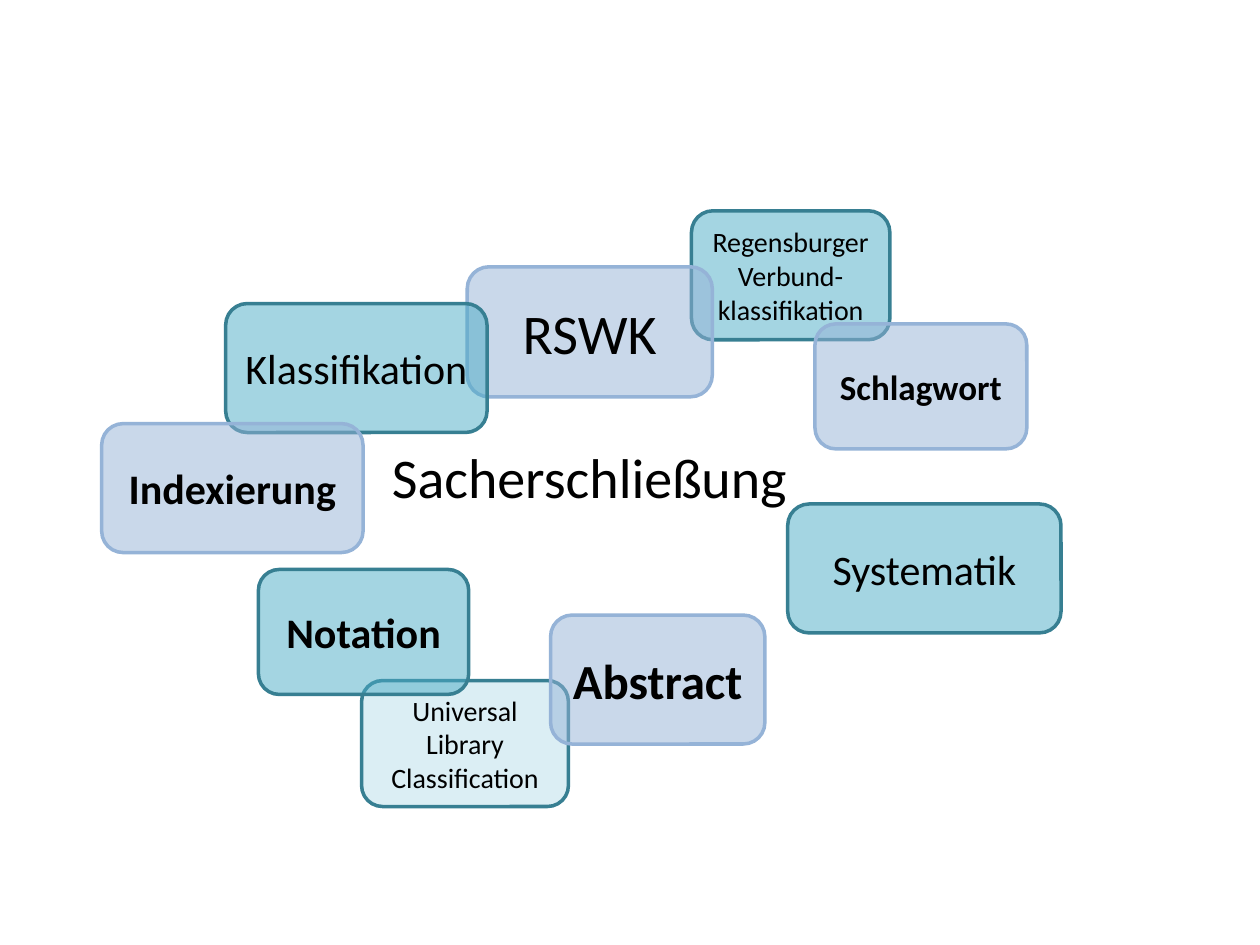
from dataclasses import dataclass

import lxml.etree
import pptx
import pptx.dml.color
import pptx.enum.shapes
import pptx.enum.text
import pptx.oxml.ns
import pptx.util
from pptx.util import Cm

FONT = "Calibri"
BLACK = "000000"


@dataclass(frozen=True)
class Style:
    fill: str
    line: str
    opacity: int = 100


TEAL = Style("4BACC6", "377F92", 50)
PALE = Style("DBEEF4", "377F92")
BLUE = Style("95B3D7", "95B3D7", 50)


@dataclass(frozen=True)
class Term:
    """A rounded box; lengths are in centimetres."""
    text: str
    left: float
    top: float
    width: float
    height: float
    style: Style
    size: int
    bold: bool = False


TERMS = [
    Term("Regensburger Verbund-\nklassifikation", 13.94, 4.25, 4, 2.6, TEAL, 16),
    Term("Universal Library Classification", 7.29, 13.72, 4.17, 2.54, PALE, 16),
    Term("RSWK", 9.42, 5.38, 4.94, 2.62, BLUE, 32),
    Term("Klassifikation", 4.55, 6.12, 5.27, 2.6, TEAL, 24),
    Term("Notation", 5.21, 11.48, 4.24, 2.52, TEAL, 24, True),
    Term("Systematik", 15.88, 10.16, 5.51, 2.6, TEAL, 24),
    Term("Schlagwort", 16.43, 6.53, 4.27, 2.52, BLUE, 20, True),
    Term("Indexierung", 2.05, 8.54, 5.27, 2.6, BLUE, 24, True),
    Term("Abstract", 11.1, 12.4, 4.32, 2.6, BLUE, 28, True),
]


def rgb(value: str) -> pptx.dml.color.RGBColor:
    return pptx.dml.color.RGBColor.from_string(value)


def set_opacity(sp, percent: int) -> None:
    color = sp.fill._xPr.find(".//" + pptx.oxml.ns.qn("a:srgbClr"))
    alpha = lxml.etree.SubElement(color, pptx.oxml.ns.qn("a:alpha"))
    alpha.set("val", str(percent * 1000))


def write(sp, text: str, size: int, bold: bool, align) -> None:
    tf = sp.text_frame
    tf.word_wrap = True
    tf.vertical_anchor = pptx.enum.text.MSO_ANCHOR.MIDDLE
    tf.text = text
    font = {"name": FONT, "size": pptx.util.Pt(size), "bold": bold}
    for p in tf.paragraphs:
        p.alignment = align
        for r in p.runs:
            for name, value in font.items():
                setattr(r.font, name, value)
            r.font.color.rgb = rgb(BLACK)


def add_term(s, term: Term) -> None:
    sp = s.shapes.add_shape(
        pptx.enum.shapes.MSO_SHAPE.ROUNDED_RECTANGLE,
        Cm(term.left), Cm(term.top), Cm(term.width), Cm(term.height))
    sp.shadow.inherit = False
    sp.fill.solid()
    sp.fill.fore_color.rgb = rgb(term.style.fill)
    if term.style.opacity < 100:
        set_opacity(sp, term.style.opacity)
    sp.line.color.rgb = rgb(term.style.line)
    sp.line.width = pptx.util.Pt(2)
    write(sp, term.text, term.size, term.bold, pptx.enum.text.PP_ALIGN.CENTER)


def main() -> None:
    prs = pptx.Presentation()
    prs.slide_width, prs.slide_height = Cm(25.4), Cm(19.05)
    s = prs.slides.add_slide(prs.slide_layouts[6])
    title = s.shapes.add_textbox(Cm(7.65), Cm(8), Cm(17.5), Cm(3.18))
    write(title, "Sacherschließung", 32, False, pptx.enum.text.PP_ALIGN.LEFT)
    for term in TERMS:
        add_term(s, term)
    prs.save("out.pptx")


if __name__ == "__main__":
    main()
